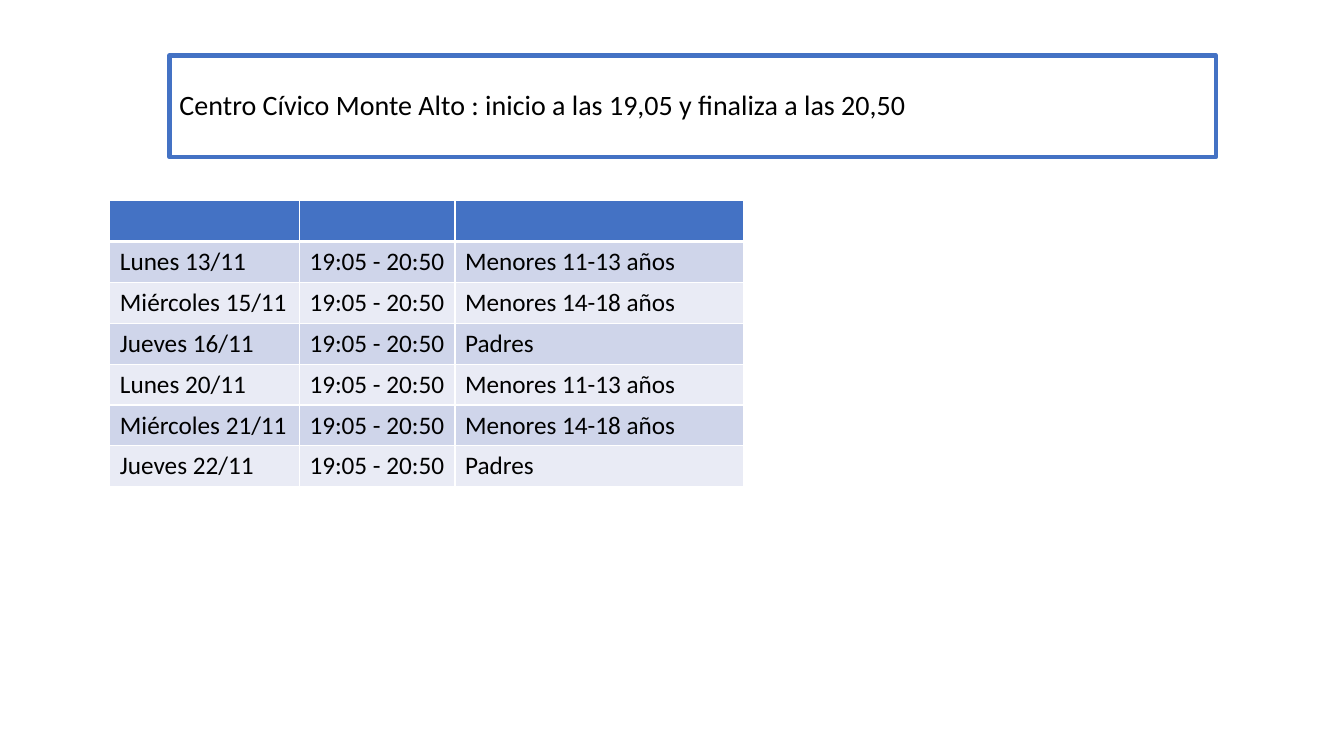
from pptx import Presentation, util as u
from pptx.dml.color import RGBColor
from pptx.enum import text
from pptx.oxml import ns
from lxml import etree

COLORS = {
    "blue": "4472C4",
    "band_dark": "CFD5EA",
    "band_light": "E9EBF5",
    "white": "FFFFFF",
    "black": "000000",
}
TITLE = "Centro Cívico Monte Alto : inicio a las 19,05 y finaliza a las 20,50"
HOURS = "19:05 - 20:50"
SESSIONS = [
    ("Lunes 13/11", "Menores 11-13 años"),
    ("Miércoles 15/11", "Menores 14-18 años"),
    ("Jueves 16/11", "Padres"),
    ("Lunes 20/11", "Menores 11-13 años"),
    ("Miércoles 21/11", "Menores 14-18 años"),
    ("Jueves 22/11", "Padres"),
]


def color(name):
    return RGBColor.from_string(COLORS[name])


def write(frame, content, size=18, font="Calibri", ink="black", spacing=1.0):
    paragraph = frame.paragraphs[0]
    paragraph.alignment = text.PP_ALIGN.LEFT
    paragraph.line_spacing = spacing
    paragraph.font.size = u.Pt(size)
    if content:
        run = paragraph.add_run()
        run.text = content
        run.font.name = font
        run.font.size = u.Pt(size)
        run.font.color.rgb = color(ink)


def add_border(cell, side, width):
    properties = cell._tc.get_or_add_tcPr()
    line = etree.SubElement(properties, ns.qn(f"a:ln{side}"), w=str(u.Pt(width)))
    fill = etree.SubElement(line, ns.qn("a:solidFill"))
    etree.SubElement(fill, ns.qn("a:srgbClr"), val=COLORS["white"])


class ScheduleSlide:
    def __init__(self, presentation):
        self.slide = presentation.slides.add_slide(presentation.slide_layouts[5])

    def title(self, content, left, top, width, height):
        shape = self.slide.shapes.title
        shape.left, shape.top = u.Pt(left), u.Pt(top)
        shape.width, shape.height = u.Pt(width), u.Pt(height)
        shape.fill.solid()
        shape.fill.fore_color.rgb = color("white")
        shape.line.color.rgb = color("blue")
        shape.line.width = u.Pt(3)
        frame = shape.text_frame
        frame.word_wrap = True
        frame.auto_size = text.MSO_AUTO_SIZE.NONE
        frame.vertical_anchor = text.MSO_ANCHOR.MIDDLE
        write(frame, content, size=20, spacing=0.9)

    def table(self, rows, left, top, widths, row_height):
        table = self.slide.shapes.add_table(
            len(rows), len(widths), u.Pt(left), u.Pt(top),
            u.Pt(sum(widths)), u.Pt(row_height * len(rows))).table
        for column, width in zip(table.columns, widths):
            column.width = u.Pt(width)
        for row_number, row in enumerate(rows):
            table.rows[row_number].height = u.Pt(row_height)
            band = "band_dark" if row_number % 2 else "band_light"
            for column_number, content in enumerate(row):
                cell = table.cell(row_number, column_number)
                write(cell.text_frame, content)
                add_border(cell, "L", 1)
                add_border(cell, "R", 1)
                add_border(cell, "T", 3 if row_number == 1 else 1)
                add_border(cell, "B", 3 if row_number == 0 else 1)
                cell.fill.solid()
                cell.fill.fore_color.rgb = color(band if row_number else "blue")


def main():
    presentation = Presentation()
    presentation.slide_width = u.Pt(960)
    presentation.slide_height = u.Pt(540)
    schedule = ScheduleSlide(presentation)
    schedule.title(TITLE, 121, 39.6, 747.4, 72.7)
    rows = [("", "", "")] + [(day, HOURS, group) for day, group in SESSIONS]
    schedule.table(rows, 78.5, 143.3, (135.4, 111.2, 206), 29.15)
    presentation.save("out.pptx")


if __name__ == "__main__":
    main()
